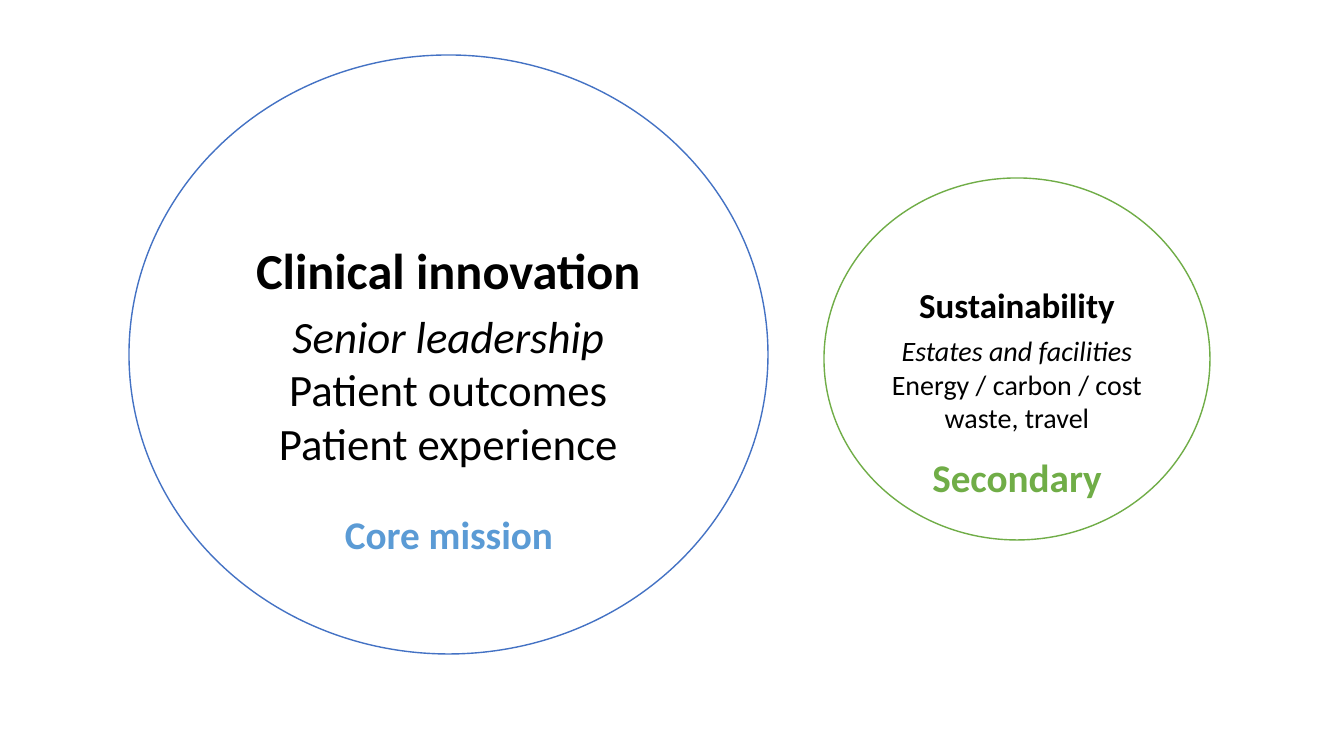
import pptx
import pptx.util
import pptx.dml.color
import pptx.enum.shapes
import pptx.enum.text

RGBColor = pptx.dml.color.RGBColor
BLACK = RGBColor(0x00, 0x00, 0x00)
WHITE = RGBColor(0xFF, 0xFF, 0xFF)
BLUE = RGBColor(0x44, 0x72, 0xC4)
LIGHT_BLUE = RGBColor(0x5B, 0x9B, 0xD5)
GREEN = RGBColor(0x70, 0xAD, 0x47)


class Deck:
    """Holds the style and the current slide, and draws its elements."""

    font = "Calibri"
    px = 12192000 / 1344

    def __init__(self):
        self.prs = pptx.Presentation()
        self.prs.slide_width = self.emu(1344)
        self.prs.slide_height = self.emu(756)
        self.slide = self.prs.slides.add_slide(self.prs.slide_layouts[6])

    def emu(self, length):
        return pptx.util.Emu(round(length * self.px))

    def box(self, rect):
        return [self.emu(v) for v in rect]

    def run(self, p, text, size, color, bold=False, italic=False):
        p.alignment = pptx.enum.text.PP_ALIGN.CENTER
        r = p.add_run()
        r.text = text
        r.font.name = self.font
        r.font.size = pptx.util.Pt(size)
        r.font.color.rgb = color
        r.font.bold = bold
        r.font.italic = italic

    def circle(self, rect, line, heading, heading_size, owner, topics, size):
        sp = self.slide.shapes.add_shape(
            pptx.enum.shapes.MSO_SHAPE.OVAL, *self.box(rect))
        sp.shadow.inherit = False
        sp.fill.solid()
        sp.fill.fore_color.rgb = WHITE
        sp.line.color.rgb = line
        sp.line.width = pptx.util.Pt(1)
        tf = sp.text_frame
        tf.word_wrap = True
        tf.margin_left = tf.margin_right = 0
        tf.vertical_anchor = pptx.enum.text.MSO_ANCHOR.MIDDLE
        p = tf.paragraphs[0]
        p.space_after = pptx.util.Pt(6)
        self.run(p, heading, heading_size, BLACK, bold=True)
        self.run(tf.add_paragraph(), owner, size, BLACK, italic=True)
        for topic in topics:
            self.run(tf.add_paragraph(), topic, size, BLACK)

    def label(self, rect, text, color):
        sp = self.slide.shapes.add_textbox(*self.box(rect))
        tf = sp.text_frame
        tf.word_wrap = True
        tf.auto_size = pptx.enum.text.MSO_AUTO_SIZE.SHAPE_TO_FIT_TEXT
        self.run(tf.paragraphs[0], text, 28, color, bold=True)


def main():
    deck = Deck()
    deck.circle((129, 55, 639, 599), BLUE, "Clinical innovation", 36,
                "Senior leadership",
                ["Patient outcomes", "Patient experience"], 32)
    deck.circle((824, 178, 386, 362), GREEN, "Sustainability", 25,
                "Estates and facilities",
                ["Energy / carbon / cost", "waste, travel"], 20)
    deck.label((327, 505, 244, 57), "Core mission", LIGHT_BLUE)
    deck.label((880, 448, 274, 57), "Secondary", GREEN)
    deck.prs.save("out.pptx")


if __name__ == "__main__":
    main()
